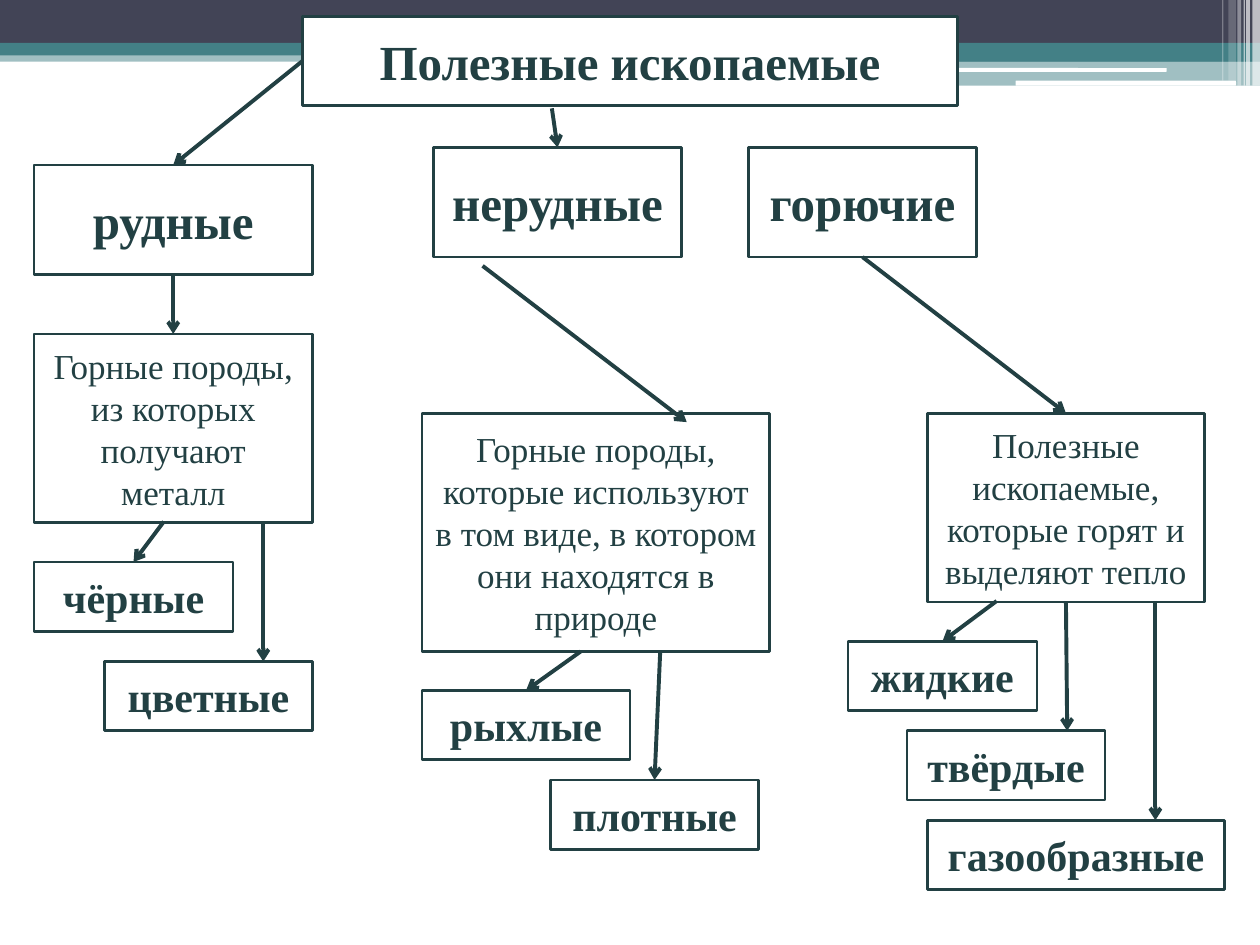
import lxml.etree
import pptx
import pptx.dml.color
import pptx.enum.shapes
import pptx.enum.text
import pptx.oxml.ns
import pptx.util
from pptx.util import Inches

WHITE = pptx.dml.color.RGBColor(0xFF, 0xFF, 0xFF)
INK = pptx.dml.color.RGBColor(0x22, 0x40, 0x43)
NAVY = pptx.dml.color.RGBColor(0x42, 0x44, 0x56)
TEAL = pptx.dml.color.RGBColor(0x43, 0x80, 0x86)
RECTANGLE = pptx.enum.shapes.MSO_SHAPE.RECTANGLE
ROUNDED = pptx.enum.shapes.MSO_SHAPE.ROUNDED_RECTANGLE
TOP, LEFT, BOTTOM = 0, 1, 2


def format_box(box, text, size, bold):
    box.fill.solid()
    box.fill.fore_color.rgb = WHITE
    box.line.color.rgb = INK
    box.line.width = pptx.util.Pt(1.5)
    frame = box.text_frame
    frame.text = text
    frame.word_wrap = True
    frame.auto_size = pptx.enum.text.MSO_AUTO_SIZE.NONE
    frame.vertical_anchor = pptx.enum.text.MSO_ANCHOR.MIDDLE
    para = frame.paragraphs[0]
    para.alignment = pptx.enum.text.PP_ALIGN.CENTER
    para.font.name = "Times New Roman"
    para.font.size = pptx.util.Pt(size)
    para.font.bold = bold
    para.font.color.rgb = INK


deck = pptx.Presentation()
deck.slide_width = Inches(10)
deck.slide_height = Inches(7.5)
page = deck.slides.add_slide(deck.slide_layouts[5])

bands = [
    (RECTANGLE, 0, 0.4, 10, 0.09, TEAL, 50),
    (RECTANGLE, 0, 0, 10, 0.34, NAVY, 100),
    (RECTANGLE, 0, 0.34, 10, 0.1, TEAL, 100),
    (RECTANGLE, 5.92, 0.39, 4.08, 0.1, TEAL, 100),
    (RECTANGLE, 5.92, 0.48, 4.08, 0.2, TEAL, 50),
    (ROUNDED, 5.91, 0.54, 3.35, 0.03, WHITE, 100),
    (ROUNDED, 8.06, 0.64, 1.75, 0.04, WHITE, 100),
    (RECTANGLE, 9.94, 0, 0.06, 0.68, WHITE, 65),
    (RECTANGLE, 9.89, 0, 0.03, 0.68, WHITE, 65),
    (RECTANGLE, 9.87, 0, 0.01, 0.68, WHITE, 60),
    (RECTANGLE, 9.82, 0, 0.03, 0.68, WHITE, 40),
    (RECTANGLE, 9.75, 0, 0.06, 0.64, WHITE, 20),
    (RECTANGLE, 9.7, 0, 0.01, 0.64, WHITE, 30),
]
for preset, left, top, width, height, color, opacity in bands:
    band = page.shapes.add_shape(preset, Inches(left), Inches(top), Inches(width), Inches(height))
    band.shadow.inherit = False
    band.line.fill.background()
    band.fill.solid()
    band.fill.fore_color.rgb = color
    if opacity < 100:
        tint = band._element.spPr.find(".//" + pptx.oxml.ns.qn("a:srgbClr"))
        lxml.etree.SubElement(tint, pptx.oxml.ns.qn("a:alpha"), val=str(opacity * 1000))

title = page.shapes.title
title.left, title.top = Inches(2.4), Inches(0.13)
title.width, title.height = Inches(5.2), Inches(0.71)
format_box(title, "Полезные ископаемые", 28, True)
title._element.getparent().append(title._element)

boxes = {"title": title}
contents = [
    ("ore", "рудные", 0.27, 1.31, 2.21, 0.87, 28),
    ("nonmetallic", "нерудные", 3.44, 1.17, 1.97, 0.87, 28),
    ("ferrous", "чёрные", 0.27, 4.46, 1.58, 0.55, 24),
    ("nonferrous", "цветные", 0.83, 5.25, 1.65, 0.55, 24),
    ("loose", "рыхлые", 3.35, 5.48, 1.65, 0.55, 24),
    ("dense", "плотные", 4.37, 6.19, 1.65, 0.55, 24),
    ("liquid", "жидкие", 6.73, 5.09, 1.5, 0.55, 24),
    ("gaseous", "газообразные", 7.36, 6.51, 2.36, 0.55, 24),
    ("solid", "твёрдые", 7.2, 5.8, 1.57, 0.55, 24),
    ("fuel", "горючие", 5.94, 1.17, 1.81, 0.87, 28),
    ("ore meaning", "Горные породы, из которых получают металл", 0.27, 2.65, 2.21, 1.5, 20),
    ("nonmetallic meaning",
     "Горные породы, которые используют в том виде, в котором они находятся в природе",
     3.35, 3.28, 2.76, 1.89, 20),
    ("fuel meaning", "Полезные ископаемые, которые горят и выделяют тепло", 7.36, 3.28, 2.2, 1.5, 20),
]
for name, text, left, top, width, height, size in contents:
    box = page.shapes.add_shape(RECTANGLE, Inches(left), Inches(top), Inches(width), Inches(height))
    box.shadow.inherit = False
    format_box(box, text, size, size > 20)
    boxes[name] = box

arrows = [
    (2.4, 0.48, 1.38, 1.31, ("title", LEFT), ("ore", TOP)),
    (1.38, 2.18, 1.38, 2.65, ("ore", BOTTOM), ("ore meaning", TOP)),
    (1.3, 4.14, 1.06, 4.46, None, ("ferrous", TOP)),
    (6.84, 2.04, 8.47, 3.28, ("fuel", BOTTOM), ("fuel meaning", TOP)),
    (4.61, 5.17, 4.17, 5.48, None, ("loose", TOP)),
    (2.09, 4.14, 2.09, 5.25, None, None),
    (7.91, 4.77, 7.48, 5.09, None, ("liquid", TOP)),
    (5.24, 5.17, 5.2, 6.19, None, ("dense", TOP)),
    (8.47, 4.77, 8.47, 5.8, ("fuel meaning", BOTTOM), None),
    (9.17, 4.77, 9.17, 6.51, None, None),
    (4.38, 0.86, 4.42, 1.17, None, ("nonmetallic", TOP)),
    (3.83, 2.11, 5.45, 3.35, None, None),
]
for start_x, start_y, end_x, end_y, source, target in arrows:
    arrow = page.shapes.add_connector(
        pptx.enum.shapes.MSO_CONNECTOR.STRAIGHT,
        Inches(start_x), Inches(start_y), Inches(end_x), Inches(end_y))
    if source:
        arrow.begin_connect(boxes[source[0]], source[1])
    if target:
        arrow.end_connect(boxes[target[0]], target[1])
    arrow.line.color.rgb = INK
    arrow.line.width = pptx.util.Pt(2.25)
    outline = arrow._element.spPr.find(pptx.oxml.ns.qn("a:ln"))
    lxml.etree.SubElement(outline, pptx.oxml.ns.qn("a:tailEnd"), type="arrow")
    lxml.etree.SubElement(arrow._element.spPr, pptx.oxml.ns.qn("a:effectLst"))

deck.save("out.pptx")
